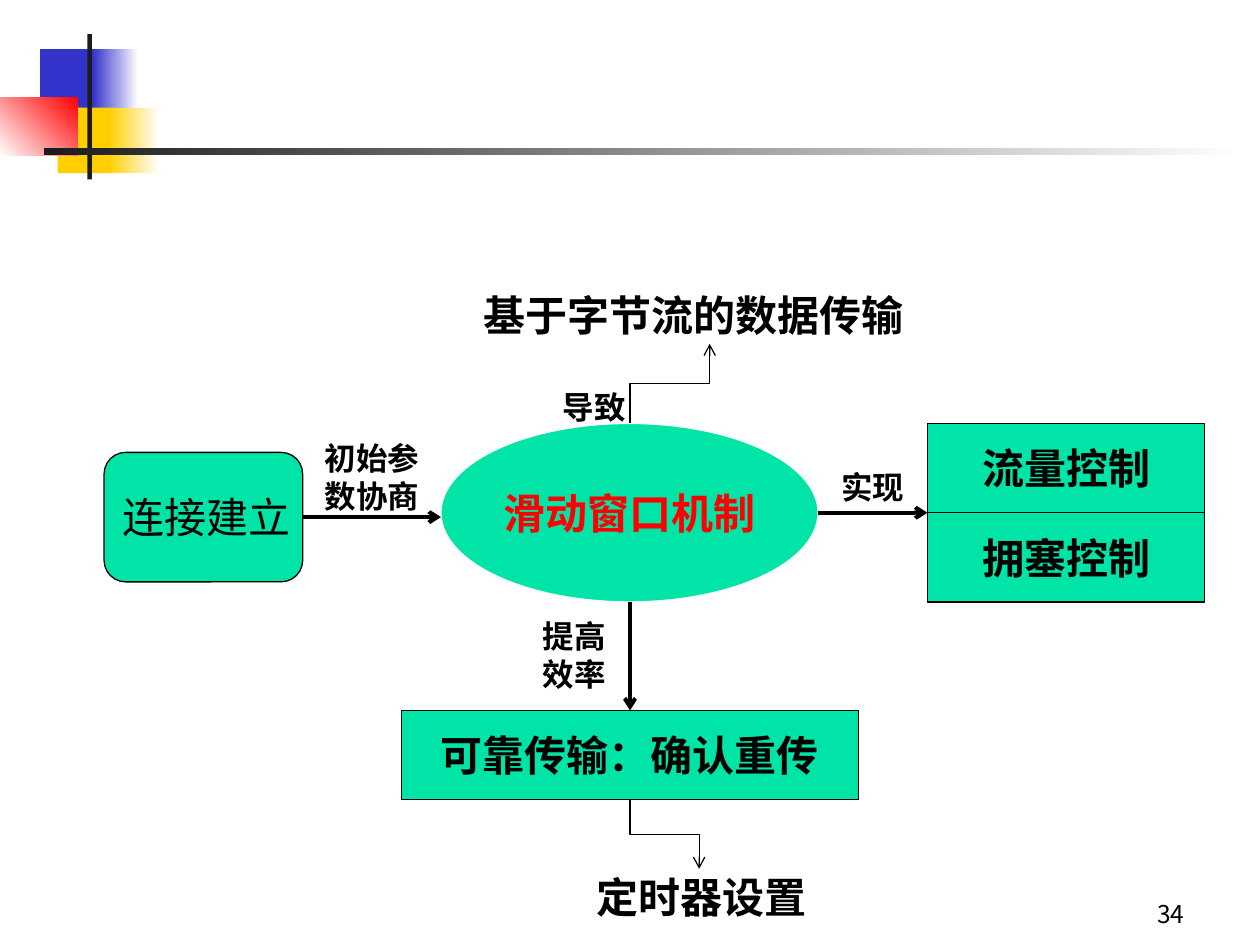
"""Build the slide on the sliding window mechanism and its related functions."""
from lxml.etree import SubElement
from pptx import Presentation
from pptx.dml.color import RGBColor
from pptx.enum.shapes import MSO_CONNECTOR, MSO_SHAPE
from pptx.enum.text import MSO_ANCHOR, PP_ALIGN
from pptx.oxml.ns import qn
from pptx.util import Pt

FONT = "Noto Sans CJK SC"
HUES = {"blue": "3333CC", "gold": "FFCF01", "red": "FF0000", "dark": "1C1C1C",
        "mint": "00E4A8", "black": "000000", "white": "FFFFFF"}
RGB = {name: RGBColor.from_string(code) for name, code in HUES.items()}
LEFT, MID, RIGHT = PP_ALIGN.LEFT, PP_ALIGN.CENTER, PP_ALIGN.RIGHT


def write(shape, text, size, hue="black", bold=True, align=LEFT,
          anchor=MSO_ANCHOR.TOP, wrap=True):
    frame = shape.text_frame
    frame.word_wrap = wrap
    frame.vertical_anchor = anchor
    para = frame.paragraphs[0]
    para.alignment = align
    run = para.add_run()
    run.text = text
    run.font.size = Pt(size)
    run.font.bold = bold
    run.font.name = FONT
    run.font.color.rgb = RGB[hue]
    SubElement(run.font._element, qn("a:ea"), typeface=FONT)


def arrow(kind, start, end, width):
    line = slide.shapes.add_connector(kind, *map(Pt, start + end))
    line.line.color.rgb = RGB["black"]
    line.line.width = Pt(width)
    SubElement(line.line._get_or_add_ln(), qn("a:tailEnd"), type="arrow")
    SubElement(line._element.spPr, qn("a:effectLst"))
    return line


deck = Presentation()
deck.slide_width, deck.slide_height = Pt(720), Pt(540)
slide = deck.slides.add_slide(deck.slide_layouts[6])

decor = [
    (23, 28, 34.5, 37.5, "blue", None, 0),
    (53, 28, 26, 37.5, "blue", "white", 0),
    (33, 61.5, 33, 37.5, "gold", None, 0),
    (62, 61.5, 29, 37.5, "gold", "white", 0),
    (0, 55.5, 44.5, 33.5, "white", "red", 45),
    (50, 19.5, 2.5, 83, "dark", None, 0),
    (25, 84.5, 685, 4, "dark", "white", 0),
]
for x, y, w, h, first, last, angle in decor:
    block = slide.shapes.add_shape(MSO_SHAPE.RECTANGLE, *map(Pt, (x, y, w, h)))
    block.shadow.inherit = False
    block.line.fill.background()
    if last:
        block.fill.gradient()
        block.fill.gradient_angle = angle
        for stop, hue in zip(block.fill.gradient_stops, (first, last)):
            stop.color.rgb = RGB[hue]
            stop.position = 0 if hue == first else 1
    else:
        block.fill.solid()
        block.fill.fore_color.rgb = RGB[first]

nodes = [
    (MSO_SHAPE.OVAL, 252, 242, 215.5, 102, "滑动窗口机制", "red", "white", True, MID),
    (MSO_SHAPE.RECTANGLE, 229.5, 406, 261, 51, "可靠传输：确认重传", "black", "black", True, MID),
    (MSO_SHAPE.RECTANGLE, 530, 242, 158.5, 51, "流量控制", "black", "black", True, MID),
    (MSO_SHAPE.RECTANGLE, 530, 293, 158.5, 51, "拥塞控制", "black", "black", True, MID),
    (MSO_SHAPE.ROUNDED_RECTANGLE, 59.5, 258.5, 113.5, 74, "连接建立", "black", "black", False, LEFT),
]
made = {}
for kind, x, y, w, h, text, hue, edge, bold, align in nodes:
    node = slide.shapes.add_shape(kind, *map(Pt, (x, y, w, h)))
    node.shadow.inherit = False
    node.fill.solid()
    node.fill.fore_color.rgb = RGB["mint"]
    node.line.color.rgb = RGB[edge]
    node.line.width = Pt(0.75)
    write(node, text, 24, hue, bold, align, MSO_ANCHOR.MIDDLE, False)
    made[text] = node

arrow(MSO_CONNECTOR.STRAIGHT, (360, 344), (360, 406), 2.25).end_connect(made["可靠传输：确认重传"], 0)
arrow(MSO_CONNECTOR.STRAIGHT, (173, 295.5), (252, 295.5), 2.25).begin_connect(made["连接建立"], 3)
arrow(MSO_CONNECTOR.STRAIGHT, (467.5, 293), (530, 293), 2.25)

for x, y, side, rise, turn in [(360, 242, 45.5, -1, 90), (360, 457, 39.5, 1, 270)]:
    bend = arrow(MSO_CONNECTOR.ELBOW, (x + side, y), (x, y + rise * side), 0.75)
    bend._element.spPr.find(qn("a:xfrm")).set("rot", str(turn * 60000))

labels = [
    (303, 349, 57, 51, "提高效率", 18, LEFT),
    (473.5, 264, 57, 29, "实现", 18, LEFT),
    (178.5, 247.5, 73.5, 51, "初始参数协商", 18, LEFT),
    (269, 162, 289.5, 36.5, "基于字节流的数据传输", 24, LEFT),
    (314.5, 218, 57, 29, "导致", 18, LEFT),
    (291, 494.5, 220, 36.5, "定时器设置", 24, MID),
]
for x, y, w, h, text, size, align in labels:
    write(slide.shapes.add_textbox(*map(Pt, (x, y, w, h))), text, size, align=align)

number = slide.shapes.add_textbox(Pt(534), Pt(498), Pt(150), Pt(36))
write(number, "34", 14, bold=False, align=RIGHT, anchor=MSO_ANCHOR.BOTTOM)

deck.save("out.pptx")
